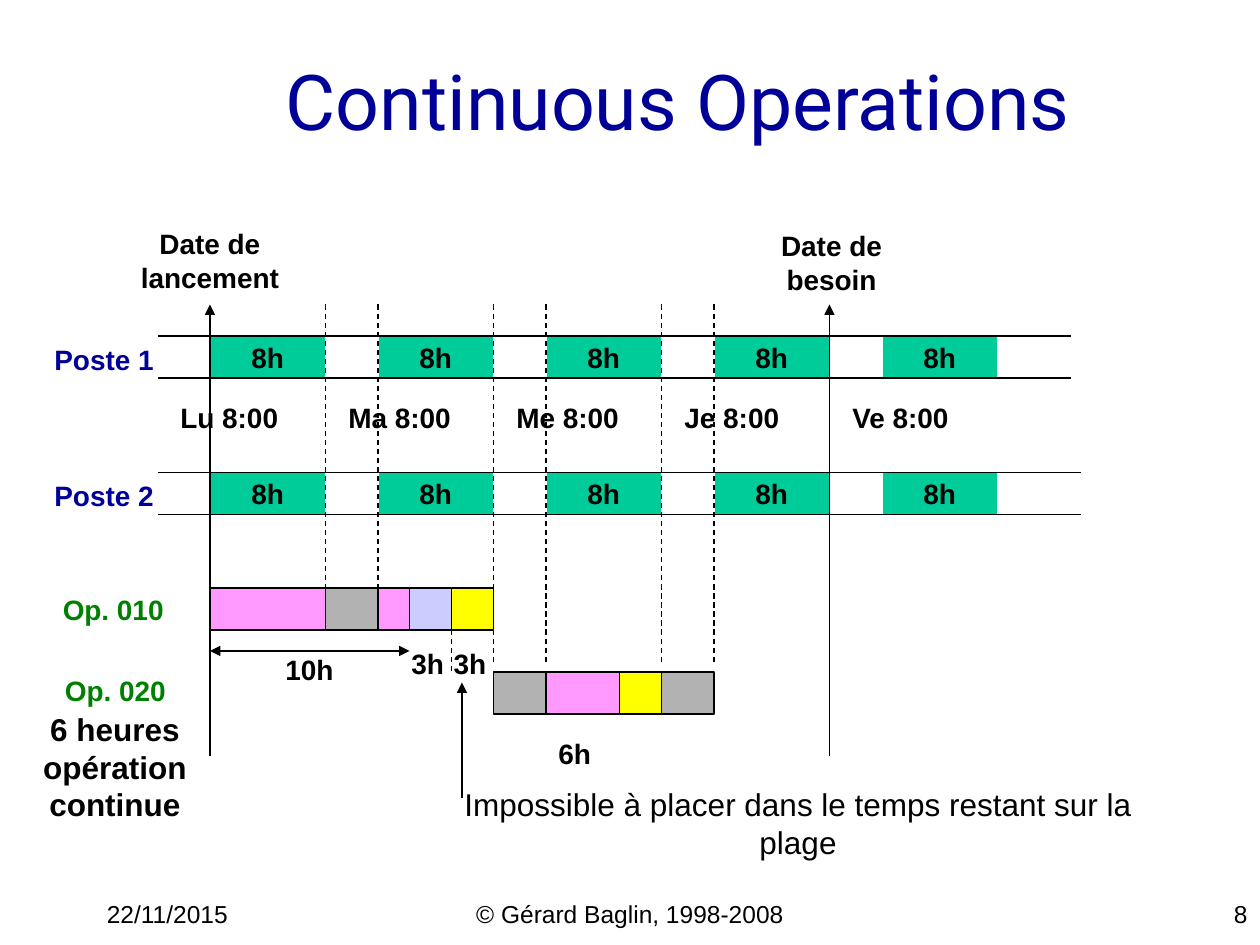
"""Build the slide that schedules continuous operations over two shifts."""
from dataclasses import dataclass

from pptx import Presentation
from pptx.dml.color import RGBColor
from pptx.enum.dml import MSO_LINE
from pptx.enum.shapes import MSO_CONNECTOR, MSO_SHAPE
from pptx.enum.text import MSO_ANCHOR, MSO_AUTO_SIZE, PP_ALIGN
from pptx.oxml.ns import qn
from pptx.oxml.xmlchemy import OxmlElement
from pptx.util import Cm, Pt

LEFT, CENTER, RIGHT = PP_ALIGN.LEFT, PP_ALIGN.CENTER, PP_ALIGN.RIGHT
TOP, MIDDLE = MSO_ANCHOR.TOP, MSO_ANCHOR.MIDDLE
DASH = MSO_LINE.DASH
STRAIGHT = MSO_CONNECTOR.STRAIGHT
RECTANGLE = MSO_SHAPE.RECTANGLE
FIT_SHAPE = MSO_AUTO_SIZE.SHAPE_TO_FIT_TEXT
TITLE_ONLY = 5
GRID = 2.54 / 12
BAR_HEIGHT, LABEL_HEIGHT = 4, 4.4
FIRST_SHIFT, DAY, SHIFT = 20, 16, 11
PAUSE = DAY - SHIFT


@dataclass(frozen=True)
class Theme:
    """Colours, fonts and type sizes of the slide."""
    navy: str = "000099"
    green: str = "008000"
    teal: str = "00CC99"
    pink: str = "FF99FF"
    gray: str = "B2B2B2"
    lavender: str = "CCCCFF"
    yellow: str = "FFFF00"
    black: str = "000000"
    white: str = "FFFFFF"
    title_font: str = "Roboto"
    body_font: str = "Arial"
    title_size: int = 44
    note_size: int = 18
    label_size: int = 16
    footer_size: int = 14
    line_width: float = 0.75


def grid(*steps):
    """Turn grid steps into lengths."""
    return [Cm(step * GRID) for step in steps]


class Schedule:
    """Draws the elements of the schedule on one slide."""

    def __init__(self, slide, theme):
        self.slide = slide
        self.theme = theme

    def set_text(self, text_frame, text, size, color, bold=True, align=CENTER, font=None):
        text_frame.text = text
        for paragraph in text_frame.paragraphs:
            paragraph.alignment = align
            for run in paragraph.runs:
                run.font.name = font or self.theme.body_font
                run.font.size = Pt(size)
                run.font.bold = bold
                run.font.color.rgb = RGBColor.from_string(color)

    def title(self, text, left, top, width, height):
        shape = self.slide.shapes.title
        shape.left, shape.top, shape.width, shape.height = grid(left, top, width, height)
        shape.text_frame.vertical_anchor = MIDDLE
        self.set_text(shape.text_frame, text, self.theme.title_size, self.theme.navy,
                      False, RIGHT, self.theme.title_font)

    def label(self, text, left, top, width, height=LABEL_HEIGHT, color=None,
              size=None, bold=True, align=LEFT, anchor=TOP):
        text_frame = self.slide.shapes.add_textbox(*grid(left, top, width, height)).text_frame
        text_frame.word_wrap = False
        text_frame.auto_size = FIT_SHAPE
        text_frame.vertical_anchor = anchor
        self.set_text(text_frame, text, size or self.theme.label_size,
                      color or self.theme.black, bold, align)

    def footer(self, text, left, width, align):
        text_frame = self.slide.shapes.add_textbox(*grid(left, 85, width, 3)).text_frame
        text_frame.word_wrap = True
        self.set_text(text_frame, text, self.theme.footer_size, self.theme.black, False, align)

    def bar(self, left, top, width, fill, outline, text=""):
        shape = self.slide.shapes.add_shape(RECTANGLE, *grid(left, top, width, BAR_HEIGHT))
        shape.shadow.inherit = False
        shape.fill.solid()
        shape.fill.fore_color.rgb = RGBColor.from_string(fill)
        shape.line.color.rgb = RGBColor.from_string(outline)
        shape.line.width = Pt(self.theme.line_width)
        if text:
            shape.text_frame.word_wrap = False
            shape.text_frame.vertical_anchor = MIDDLE
            self.set_text(shape.text_frame, text, self.theme.label_size, self.theme.black)

    def operation(self, left, top, parts):
        for width, fill in parts:
            self.bar(left, top, width, fill, self.theme.black)
            left += width

    def line(self, start, end, dash=None, arrows=()):
        connector = self.slide.shapes.add_connector(STRAIGHT, *grid(*start, *end))
        connector.line.color.rgb = RGBColor.from_string(self.theme.black)
        connector.line.width = Pt(self.theme.line_width)
        if dash:
            connector.line.dash_style = dash
        properties = connector._element.spPr
        for arrow in arrows:
            arrowhead = OxmlElement(f"a:{arrow}")
            arrowhead.set("type", "triangle")
            properties.find(qn("a:ln")).append(arrowhead)
        properties.append(OxmlElement("a:effectLst"))

    def workstation(self, name, top, line_end):
        for day in range(5):
            self.bar(FIRST_SHIFT + day * DAY, top, SHIFT, self.theme.teal,
                     self.theme.white, "8h")
        for edge in (top, top + BAR_HEIGHT):
            self.line((15, edge), (line_end, edge))
        self.label(name, 4, top, 11.9, color=self.theme.navy)


def main():
    """Build and save the slide."""
    presentation = Presentation()
    presentation.slide_width, presentation.slide_height = Cm(25.4), Cm(19.05)
    slide = presentation.slides.add_slide(presentation.slide_layouts[TITLE_ONLY])
    theme = Theme()
    schedule = Schedule(slide, theme)

    schedule.title("Continuous Operations ", 3, 2, 102, 15)
    schedule.footer("22/11/2015", 9, 25, LEFT)
    schedule.footer("© Gérard Baglin, 1998-2008", 41, 38, CENTER)
    schedule.footer("8", 95, 25, RIGHT)

    schedule.workstation("Poste 1", 32, 102)
    schedule.workstation("Poste 2", 45, 103)
    days = [("Lu", 11.8), ("Ma", 12.2), ("Me", 12.2), ("Je", 11.4), ("Ve", 11.8)]
    for index, (day, width) in enumerate(days):
        schedule.label(f"{day} 8:00", 16 + index * DAY, 37.6, width)

    schedule.operation(FIRST_SHIFT, 56, [
        (SHIFT, theme.pink), (PAUSE, theme.gray), (3, theme.pink),
        (4, theme.lavender), (4, theme.yellow)])
    schedule.operation(47, 64, [
        (PAUSE, theme.gray), (7, theme.pink), (4, theme.yellow), (PAUSE, theme.gray)])

    for day in range(3):
        shift_end = FIRST_SHIFT + day * DAY + SHIFT
        bottom = 63 if day else 56
        for position in (shift_end, shift_end + PAUSE):
            schedule.line((position, 29), (position, bottom), DASH)
    schedule.line((43, 60), (43, 64), DASH)
    for position in (FIRST_SHIFT, 79):
        schedule.line((position, 29), (position, 72), arrows=["headEnd"])
    schedule.line((FIRST_SHIFT, 62), (39, 62), arrows=["headEnd", "tailEnd"])
    schedule.line((44, 76), (44, 65), arrows=["tailEnd"])

    schedule.label("Date de\nlancement", 12.2, 21, 15.6, 7.7, align=CENTER)
    schedule.label("Date de\nbesoin", 73.2, 21.2, 12, 7.7, align=CENTER)
    schedule.label("Op. 010", 4.8, 55.8, 12.1, color=theme.green)
    schedule.label("Op. 020", 5, 63.6, 12.1, color=theme.green)
    schedule.label("10h", 26, 61.6, 7)
    schedule.label("3h", 38, 61, 5.5)
    schedule.label("3h", 42, 61, 5.5, align=RIGHT)
    schedule.label("6h", 52, 69.6, 5.5)
    schedule.label("6 heures\nopération\ncontinue", 2.9, 67, 16.1, 12,
                   size=theme.note_size, align=CENTER, anchor=MIDDLE)
    schedule.label("Impossible à placer dans le temps restant sur la plage", 39, 76, 74, 4.8,
                   size=theme.note_size, bold=False, align=CENTER, anchor=MIDDLE)

    presentation.save("out.pptx")


if __name__ == "__main__":
    main()
